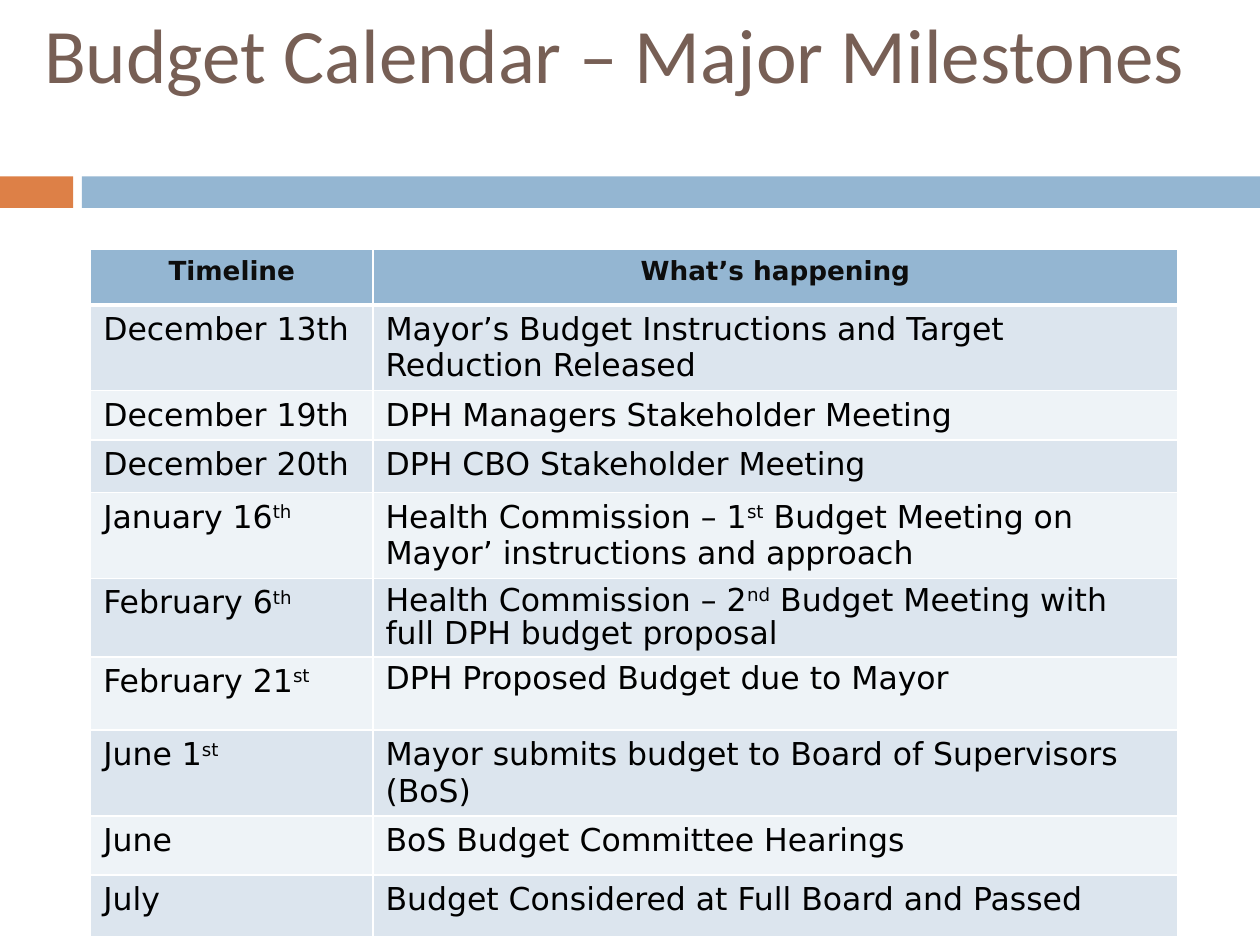
from lxml import etree
from pptx import Presentation
from pptx.dml.color import RGBColor
from pptx.enum.shapes import MSO_SHAPE
from pptx.enum.text import MSO_ANCHOR, PP_ALIGN
from pptx.oxml.ns import qn
from pptx.util import Inches, Pt

RECTANGLE = MSO_SHAPE.RECTANGLE
MIDDLE = MSO_ANCHOR.MIDDLE
LEFT, CENTER = PP_ALIGN.LEFT, PP_ALIGN.CENTER
TITLE_ONLY = 5

COLORS = {
    "title": "775F55", "orange": "DD8047", "blue": "94B6D2", "header": "0D0D0D",
    "text": "000000", "dark band": "DCE5EE", "light band": "EEF3F7", "border": "FFFFFF",
}
TITLE_FORMAT = {"name": "Calibri", "size": Pt(44), "bold": False}
HEADER_FORMAT = {"name": "DejaVu Sans", "size": Pt(15), "bold": True}
BODY_FORMAT = {"name": "DejaVu Sans", "size": Pt(18), "bold": False}

COLUMN_WIDTHS = [2.24, 6.39]
# Row height, timeline, event, line spacing of the event; ^ encloses superscripts
MILESTONES = [
    (0.44, "Timeline", "What’s happening", 1.0),
    (0.43, "December 13th", "Mayor’s Budget Instructions and Target Reduction Released", 1.0),
    (0.38, "December 19th", "DPH Managers Stakeholder Meeting", 1.0),
    (0.42, "December 20th", "DPH CBO Stakeholder Meeting", 1.0),
    (0.49, "January 16^th^",
     "Health Commission – 1^st^ Budget Meeting on Mayor’ instructions and approach", 1.0),
    (0.58, "February 6^th^",
     "Health Commission – 2^nd^ Budget Meeting with full DPH budget proposal", 0.9),
    (0.58, "February 21^st^", "DPH Proposed Budget due to Mayor", 0.9),
    (0.42, "June 1^st^", "Mayor submits budget to Board of Supervisors (BoS)", 1.0),
    (0.47, "June", "BoS Budget Committee Hearings", 1.0),
    (0.49, "July", "Budget Considered at Full Board and Passed", 1.0),
]


def rgb(name):
    return RGBColor.from_string(COLORS[name])


def write_text(paragraph, text, font_format, color):
    for index, part in enumerate(text.split("^")):
        if not part:
            continue
        run = paragraph.add_run()
        run.text = part
        for attribute, value in font_format.items():
            setattr(run.font, attribute, value)
        run.font.color.rgb = rgb(color)
        if index % 2:
            run._r.get_or_add_rPr().set("baseline", "30000")


def add_title(slide, text):
    title = slide.shapes.title
    title.left, title.top = Inches(0.25), Inches(0.17)
    title.width, title.height = Inches(9.5), Inches(0.5)
    title.text_frame.vertical_anchor = MIDDLE
    title.text_frame.word_wrap = True
    paragraph = title.text_frame.paragraphs[0]
    paragraph.alignment = LEFT
    write_text(paragraph, text, TITLE_FORMAT, "title")


def add_bar(slide, left, width, color):
    bar = slide.shapes.add_shape(
        RECTANGLE, Inches(left), Inches(1.4), Inches(width), Inches(0.25))
    bar.shadow.inherit = False
    bar.fill.solid()
    bar.fill.fore_color.rgb = rgb(color)
    bar.line.fill.background()


def set_borders(cell, top, bottom):
    properties = cell._tc.get_or_add_tcPr()
    for side, points in {"L": 1, "R": 1, "T": top, "B": bottom}.items():
        line = etree.SubElement(properties, qn(f"a:ln{side}"), w=str(Pt(points)))
        fill = etree.SubElement(line, qn("a:solidFill"))
        etree.SubElement(fill, qn("a:srgbClr"), val=COLORS["border"])


def format_cell(cell, text, row_index, spacing):
    is_header = row_index == 0
    # A thick line separates the header from the body
    set_borders(cell, top=3 if row_index == 1 else 1, bottom=3 if is_header else 1)
    band = "dark band" if row_index % 2 else "light band"
    cell.fill.solid()
    cell.fill.fore_color.rgb = rgb("blue" if is_header else band)
    paragraph = cell.text_frame.paragraphs[0]
    paragraph.alignment = CENTER if is_header else LEFT
    paragraph.line_spacing = spacing
    write_text(paragraph, text, HEADER_FORMAT if is_header else BODY_FORMAT,
               "header" if is_header else "text")


def add_milestone_table(slide):
    height = sum(row[0] for row in MILESTONES)
    table = slide.shapes.add_table(
        len(MILESTONES), len(COLUMN_WIDTHS), Inches(0.72), Inches(1.98),
        Inches(sum(COLUMN_WIDTHS)), Inches(height)).table
    for column, width in zip(table.columns, COLUMN_WIDTHS):
        column.width = Inches(width)
    for index, (row_height, timeline, event, spacing) in enumerate(MILESTONES):
        table.rows[index].height = Inches(row_height)
        format_cell(table.cell(index, 0), timeline, index, 1.0)
        format_cell(table.cell(index, 1), event, index, spacing)


def main():
    presentation = Presentation()
    presentation.slide_width, presentation.slide_height = Inches(10), Inches(7.5)
    slide = presentation.slides.add_slide(presentation.slide_layouts[TITLE_ONLY])

    # Heading and divider bars
    add_title(slide, "Budget Calendar – Major Milestones")
    add_bar(slide, 0, 0.58, "orange")
    add_bar(slide, 0.65, 9.35, "blue")

    # Calendar
    add_milestone_table(slide)
    presentation.save("out.pptx")


if __name__ == "__main__":
    main()
